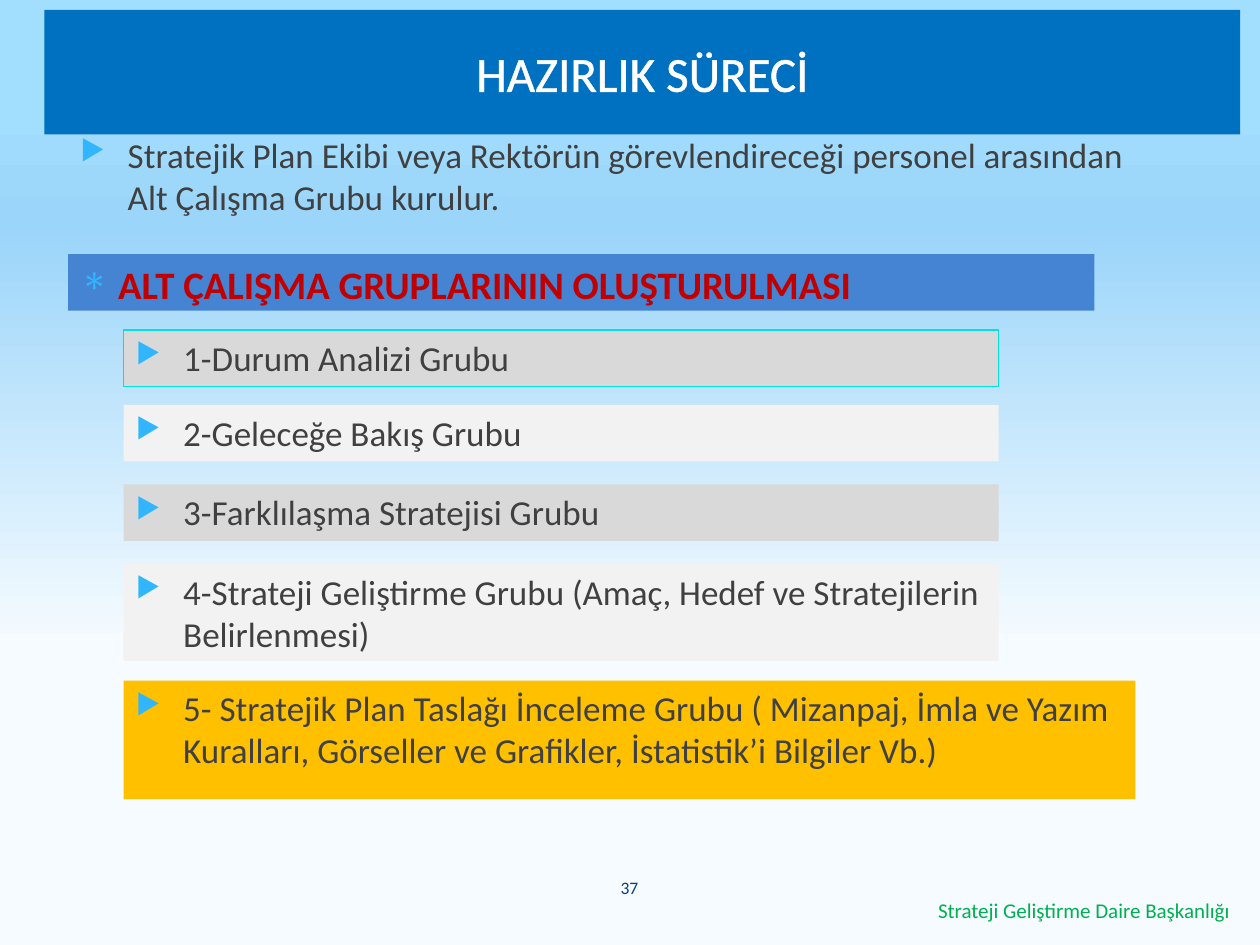
from dataclasses import dataclass

from lxml.etree import SubElement
from pptx import Presentation
from pptx.dml.color import RGBColor as Rgb
from pptx.enum.shapes import MSO_SHAPE as Shape
from pptx.enum.text import MSO_ANCHOR as Anchor, PP_ALIGN as Align
from pptx.oxml.ns import qn
from pptx.util import Pt


@dataclass(frozen=True)
class Theme:
    font: str = "Calibri"
    white: str = "FFFFFF"
    banner: str = "0070C0"
    heading_fill: str = "4584D3"
    heading_text: str = "C00000"
    body_text: str = "404040"
    bullet: str = "31B6FD"
    dark_row: str = "D9D9D9"
    light_row: str = "F2F2F2"
    row_line: str = "05E0DB"
    highlight: str = "FFC000"
    footer: str = "00B050"
    number: str = "073E87"
    sky: tuple = ((3, "A2DEFE"), (11, "A2DEFE"), (24, "9BD5FA"), (68, "F5FBFF"))
    title_size: float = 28
    heading_size: float = 22.2
    body_size: float = 20
    footer_size: float = 12
    number_size: float = 10


def add_color(parent, color):
    SubElement(parent, qn("a:srgbClr"), val=color)


class Painter:
    def __init__(self, page, theme):
        self.page = page
        self.theme = theme

    def background(self):
        fill = self.page.background.fill
        fill.gradient()
        fill.gradient_angle = 270
        stops = next(self.page.element.iter(qn("a:gsLst")))
        for stop in list(stops):
            stops.remove(stop)
        for percent, color in self.theme.sky:
            stop = SubElement(stops, qn("a:gs"), pos=str(percent * 1000))
            add_color(stop, color)

    def panel(self, bounds, color, line=None):
        box = self.page.shapes.add_shape(Shape.RECTANGLE, *map(Pt, bounds))
        box.shadow.inherit = False
        box.fill.solid()
        box.fill.fore_color.rgb = Rgb.from_string(color)
        if line:
            box.line.color.rgb = Rgb.from_string(line)
            box.line.width = Pt(0.75)
        else:
            box.line.fill.background()
        return box

    def text_box(self, bounds):
        return self.page.shapes.add_textbox(*map(Pt, bounds))

    def add_text(self, box, text, size, color, align=Align.LEFT, anchor=Anchor.TOP, bold=False):
        frame = box.text_frame
        frame.word_wrap = True
        frame.vertical_anchor = anchor
        para = frame.paragraphs[0]
        para.alignment = align
        span = para.add_run()
        span.text = text
        span.font.name = self.theme.font
        span.font.size = Pt(size)
        span.font.bold = bold
        span.font.color.rgb = Rgb.from_string(color)
        return para

    def outline(self, para, color):
        """Draw a thin line around the letters of the paragraph's first run."""
        props = para.runs[0]._r.get_or_add_rPr()
        line = SubElement(props, qn("a:ln"), w=str(Pt(0.75)))
        add_color(SubElement(line, qn("a:solidFill")), color)
        props.insert(0, line)

    def bullet(self, para, mark, indent, before, percent=100):
        para.space_before = Pt(before)
        props = para._p.get_or_add_pPr()
        props.set("marL", str(Pt(indent)))
        props.set("indent", str(-Pt(indent)))
        add_color(SubElement(props, qn("a:buClr")), self.theme.bullet)
        SubElement(props, qn("a:buSzPct"), val=str(percent * 1000))
        SubElement(props, qn("a:buChar"), char=mark)

    def item(self, box, text):
        para = self.add_text(box, text, self.theme.body_size, self.theme.body_text)
        self.bullet(para, "▶", indent=27, before=10, percent=80)


def main():
    theme = Theme()
    deck = Presentation()
    deck.slide_width, deck.slide_height = Pt(720), Pt(540)
    painter = Painter(deck.slides.add_slide(deck.slide_layouts[6]), theme)
    painter.background()

    banner = painter.panel((25.4, 5.7, 683.3, 71.2), theme.banner)
    title = painter.add_text(banner, "HAZIRLIK SÜRECİ", theme.title_size, theme.white,
                             Align.CENTER, Anchor.MIDDLE)
    painter.outline(title, theme.white)

    painter.item(painter.text_box((38.9, 72.7, 625, 57.6)),
                 "Stratejik Plan Ekibi veya Rektörün görevlendireceği personel "
                 "arasından Alt Çalışma Grubu kurulur.")

    heading_box = painter.panel((38.9, 145.2, 586.5, 32.4), theme.heading_fill)
    heading = painter.add_text(heading_box, "ALT ÇALIŞMA GRUPLARININ OLUŞTURULMASI",
                               theme.heading_size, theme.heading_text, bold=True)
    painter.bullet(heading, "∗", indent=21.6, before=4.4)

    groups = (
        (188.6, 500, 32.4, theme.dark_row, theme.row_line, "1-Durum Analizi Grubu"),
        (231.3, 500, 32.4, theme.light_row, None, "2-Geleceğe Bakış Grubu"),
        (276.8, 500, 32.4, theme.dark_row, None, "3-Farklılaşma Stratejisi Grubu"),
        (322.3, 500, 55.4, theme.light_row, None,
         "4-Strateji Geliştirme Grubu (Amaç, Hedef ve Stratejilerin Belirlenmesi)"),
        (389, 578.2, 67.7, theme.highlight, None,
         "5- Stratejik Plan Taslağı İnceleme Grubu ( Mizanpaj, İmla ve Yazım "
         "Kuralları, Görseller ve Grafikler, İstatistik’i Bilgiler Vb.)"),
    )
    for top, width, height, color, line, text in groups:
        painter.item(painter.panel((70.6, top, width, height), color, line), text)

    painter.add_text(painter.text_box((509.8, 491, 200.1, 39.6)),
                     "Strateji Geliştirme Daire Başkanlığı",
                     theme.footer_size, theme.footer, Align.RIGHT, Anchor.BOTTOM)
    painter.add_text(painter.text_box((313.9, 492.5, 91.5, 28.8)), "37",
                     theme.number_size, theme.number, Align.CENTER, Anchor.MIDDLE)

    deck.save("out.pptx")


if __name__ == "__main__":
    main()
